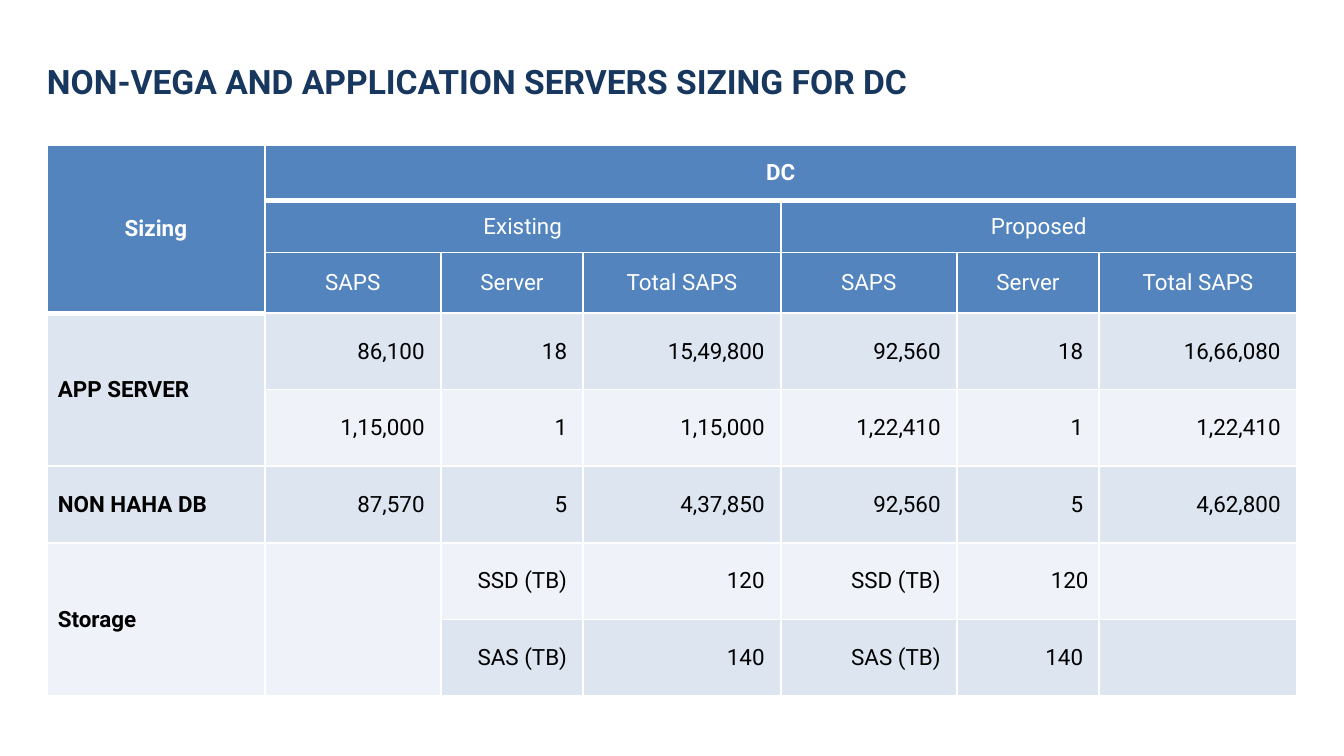
from dataclasses import dataclass
from itertools import product

import pptx
import pptx.dml.color
import pptx.enum.text
import pptx.oxml
import pptx.oxml.ns
import pptx.slide
import pptx.table
import pptx.text.text
import pptx.util
from lxml import etree

Inches = pptx.util.Inches
Align = pptx.enum.text.PP_ALIGN
Anchor = pptx.enum.text.MSO_ANCHOR


@dataclass(frozen=True)
class Theme:
    font: str = "Roboto"
    title: str = "17375E"
    header: str = "5384BE"
    band: str = "DDE5F0"
    light_band: str = "EFF2F8"
    white: str = "FFFFFF"
    ink: str = "000000"
    title_size: int = 18
    table_size: int = 12
    rule: int = 1
    heavy_rule: int = 3


@dataclass(frozen=True)
class Entry:
    row: int
    column: int
    text: str
    fill: str
    color: str
    align: Align
    bold: bool = False
    row_span: int = 1
    column_span: int = 1
    right_inset: float = 0.08
    heavy_top: bool = False
    heavy_bottom: bool = False


THEME = Theme()
SLIDE_WIDTH = 10
SLIDE_HEIGHT = SLIDE_WIDTH * 9 / 16
LEFT = 0.35
GROUP_COLUMNS = [1.31, 1.06, 1.47]
COLUMNS = [1.62] + GROUP_COLUMNS * 2
HEADER_ROWS = [0.41, 0.39, 0.45]
ROWS = HEADER_ROWS + [0.57] * 5

GROUPS = ["Existing", "Proposed"]
MEASURES = ["SAPS", "Server", "Total SAPS"]
LABELS = [("APP SERVER", 3, 2), ("NON HAHA DB", 5, 1), ("Storage", 6, 2)]
FIGURES = [
    ["86,100", "18", "15,49,800", "92,560", "18", "16,66,080"],
    ["1,15,000", "1", "1,15,000", "1,22,410", "1", "1,22,410"],
    ["87,570", "5", "4,37,850", "92,560", "5", "4,62,800"],
    ["", "SSD (TB)", "120", "SSD (TB)", "120", ""],
    ["", "SAS (TB)", "140", "SAS (TB)", "140", ""],
]
FLUSH_FIGURE = (6, 5)


def add_text(paragraph: pptx.text.text._Paragraph, text: str, size: int,
             color: str, bold: bool) -> None:
    run = paragraph.add_run()
    run.text = text
    run.font.name = THEME.font
    run.font.size = pptx.util.Pt(size)
    run.font.bold = bold
    run.font.color.rgb = pptx.dml.color.RGBColor.from_string(color)


def add_title(slide: pptx.slide.Slide, text: str) -> None:
    title = slide.shapes.add_textbox(
        Inches(LEFT), Inches(0.4), Inches(8.24), Inches(0.41))
    frame = title.text_frame
    frame.word_wrap = True
    frame.vertical_anchor = Anchor.MIDDLE
    frame.margin_left = 0
    add_text(frame.paragraphs[0], text, THEME.title_size, THEME.title, True)


def draw_borders(cell: pptx.table._Cell, entry: Entry) -> None:
    heavy = {"T": entry.heavy_top, "B": entry.heavy_bottom}
    properties = cell._tc.get_or_add_tcPr()
    qn = pptx.oxml.ns.qn
    for side in "LRTB":
        points = THEME.heavy_rule if heavy.get(side) else THEME.rule
        line = etree.SubElement(properties, qn(f"a:ln{side}"), w=str(pptx.util.Pt(points)))
        paint = etree.SubElement(line, qn("a:solidFill"))
        etree.SubElement(paint, qn("a:srgbClr"), val=THEME.white)


def fill_entry(table: pptx.table.Table, entry: Entry) -> None:
    last_row = entry.row + entry.row_span - 1
    last_column = entry.column + entry.column_span - 1
    origin = table.cell(entry.row, entry.column)
    if (entry.row_span, entry.column_span) != (1, 1):
        origin.merge(table.cell(last_row, last_column))
    for row, column in product(range(entry.row, last_row + 1),
                               range(entry.column, last_column + 1)):
        cell = table.cell(row, column)
        draw_borders(cell, entry)
        cell.fill.solid()
        cell.fill.fore_color.rgb = pptx.dml.color.RGBColor.from_string(entry.fill)
    origin.vertical_anchor = Anchor.MIDDLE
    origin.margin_left = Inches(0.08)
    origin.margin_right = Inches(entry.right_inset)
    origin.margin_top = origin.margin_bottom = 0
    paragraph = origin.text_frame.paragraphs[0]
    paragraph.alignment = entry.align
    if entry.text:
        add_text(paragraph, entry.text, THEME.table_size, entry.color, entry.bold)


def header_entry(row: int, column: int, text: str, **options) -> Entry:
    return Entry(row, column, text, THEME.header, THEME.white, Align.CENTER, **options)


def band_color(row: int) -> str:
    return THEME.light_band if row % 2 == 0 else THEME.band


def sizing_entries() -> list[Entry]:
    entries = [
        header_entry(0, 0, "Sizing", bold=True, row_span=3, heavy_bottom=True),
        header_entry(0, 1, "DC", bold=True, column_span=6, heavy_bottom=True),
    ]
    for index, group in enumerate(GROUPS):
        first = 1 + index * len(MEASURES)
        entries.append(header_entry(1, first, group, column_span=len(MEASURES)))
        entries += [header_entry(2, first + offset, measure)
                    for offset, measure in enumerate(MEASURES)]
    for label, row, span in LABELS:
        entries.append(Entry(row, 0, label, band_color(row), THEME.ink, Align.LEFT,
                             bold=True, row_span=span, heavy_top=row == len(HEADER_ROWS)))
    for row, figures in enumerate(FIGURES, len(HEADER_ROWS)):
        for column, figure in enumerate(figures, 1):
            if (row, column) == (7, 1):
                continue
            entries.append(Entry(
                row, column, figure, band_color(row), THEME.ink, Align.RIGHT,
                row_span=2 if (row, column) == (6, 1) else 1,
                right_inset=0.08 if (row, column) == FLUSH_FIGURE else 0.12))
    return entries


def add_sizing_table(slide: pptx.slide.Slide) -> None:
    table = slide.shapes.add_table(
        len(ROWS), len(COLUMNS), Inches(LEFT), Inches(1.08),
        Inches(sum(COLUMNS)), Inches(sum(ROWS))).table
    for column, width in zip(table.columns, COLUMNS):
        column.width = Inches(width)
    for row, height in zip(table.rows, ROWS):
        row.height = Inches(height)
    for entry in sizing_entries():
        fill_entry(table, entry)


def main() -> None:
    deck = pptx.Presentation()
    deck.slide_width = Inches(SLIDE_WIDTH)
    deck.slide_height = Inches(SLIDE_HEIGHT)
    slide = deck.slides.add_slide(deck.slide_layouts[6])
    add_title(slide, "NON-VEGA AND APPLICATION SERVERS SIZING FOR DC")
    add_sizing_table(slide)
    deck.save("out.pptx")


if __name__ == "__main__":
    main()
